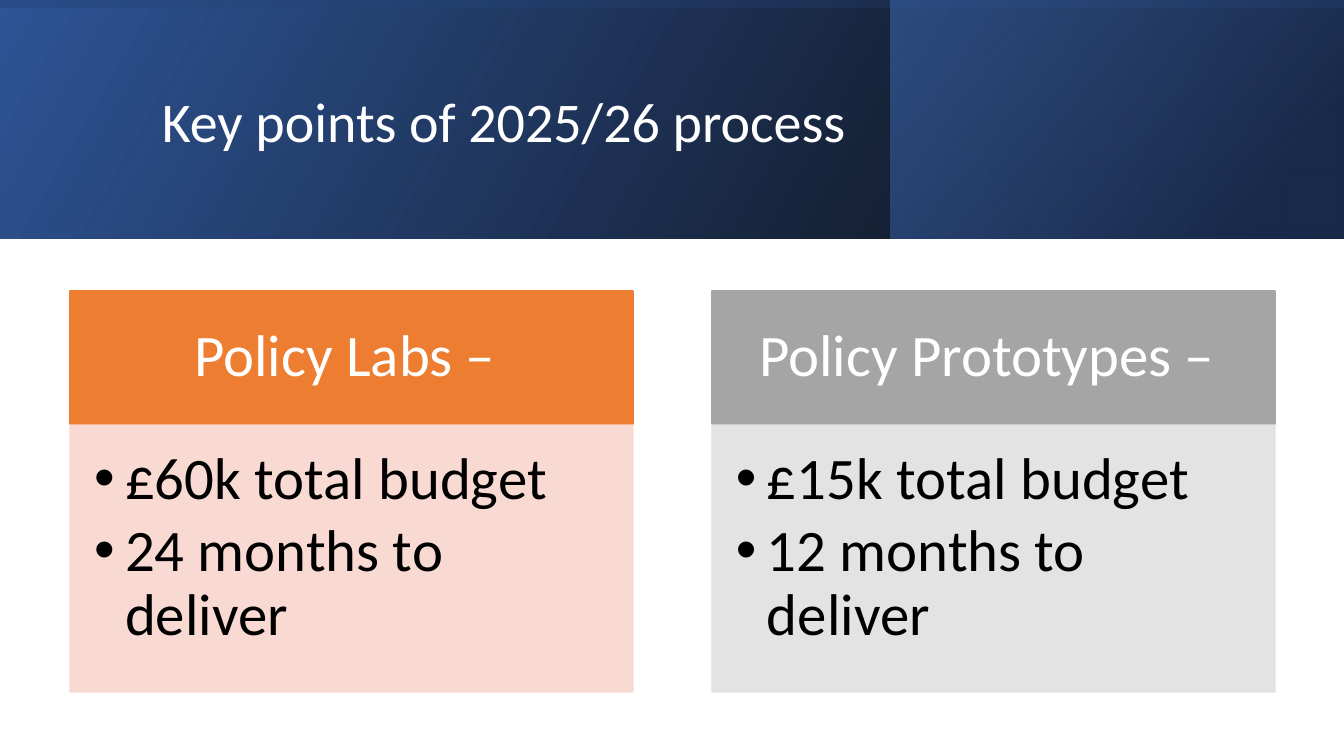
from dataclasses import dataclass

from lxml import etree
from pptx import Presentation
from pptx.dml.color import RGBColor
from pptx.enum.shapes import MSO_SHAPE
from pptx.enum.text import MSO_ANCHOR, MSO_AUTO_SIZE, PP_ALIGN
from pptx.oxml.ns import qn
from pptx.util import Emu, Pt

RECTANGLE = MSO_SHAPE.RECTANGLE
TOP, MIDDLE = MSO_ANCHOR.TOP, MSO_ANCHOR.MIDDLE
LEFT, CENTER = PP_ALIGN.LEFT, PP_ALIGN.CENTER
NO_AUTOFIT = MSO_AUTO_SIZE.NONE
COMPARISON_LAYOUT = 4
EMU_PER_PX = 914400 / 100.8


@dataclass(frozen=True)
class Theme:
    font: str = "Calibri"
    title_size: int = 40
    card_size: int = 42
    light: str = "FFFFFF"
    dark: str = "000000"
    blue: str = "2F5597"
    navy: str = "203864"
    accent: str = "4472C4"
    orange: str = "ED7D31"
    peach: str = "F8D7CE"
    gray: str = "A5A5A5"
    pale_gray: str = "E1E1E1"


THEME = Theme()

BANNER = [
    ((0, 0, 1344, 239), 0, 330, [(0, THEME.dark, 96), (100, THEME.blue, 100)]),
    ((891, 0, 452, 239), 0, 320, [(19, THEME.navy, 68), (100, THEME.accent, 48)]),
    ((552, -552, 239, 1344), 270, 350, [(23, THEME.blue, 16), (99, THEME.dark, 45)]),
]

CARDS = [
    ("Policy Labs – ", ["£60k total budget", "24 months to deliver"],
     THEME.orange, THEME.peach),
    ("Policy Prototypes – ", ["£15k total budget", "12 months to deliver"],
     THEME.gray, THEME.pale_gray),
]
CARD_LEFT, CARD_STEP, CARD_WIDTH = 70, 642, 563
HEADING_TOP, HEADING_HEIGHT = 291, 133
POINTS_TOP, POINTS_HEIGHT = 425, 267
BULLET_INDENT = 31


def px(length):
    return Emu(round(length * EMU_PER_PX))


def place(shape, box):
    shape.left, shape.top, shape.width, shape.height = map(px, box)


def add_color(parent, color, opacity):
    rgb = etree.SubElement(parent, qn("a:srgbClr"), val=color)
    etree.SubElement(rgb, qn("a:alpha"), val=str(opacity * 1000))


def add_banner_layer(slide, box, rotation, angle, stops):
    layer = slide.shapes.add_shape(RECTANGLE, *map(px, box))
    layer.shadow.inherit = False
    layer.line.fill.background()
    layer.rotation = rotation
    properties = layer._element.spPr
    properties.find(qn("a:xfrm")).set("flipH", "1")
    gradient = etree.Element(qn("a:gradFill"), rotWithShape="1")
    stop_list = etree.SubElement(gradient, qn("a:gsLst"))
    for position, color, opacity in stops:
        stop = etree.SubElement(stop_list, qn("a:gs"), pos=str(position * 1000))
        add_color(stop, color, opacity)
    etree.SubElement(gradient, qn("a:lin"), ang=str(angle * 60000), scaled="0")
    properties.find(qn("a:prstGeom")).addnext(gradient)


def paint(shape, color, opacity=100):
    shape.line.width = Pt(1)
    for fill in (shape.fill, shape.line.fill):
        fill.solid()
        fill.fore_color.rgb = RGBColor.from_string(color)
    for rgb in shape._element.spPr.iter(qn("a:srgbClr")):
        etree.SubElement(rgb, qn("a:alpha"), val=str(opacity * 1000))


def write(shape, lines, size, color, align, anchor, insets, space_after=0):
    frame = shape.text_frame
    frame.text = "\n".join(lines)
    frame.word_wrap = True
    frame.auto_size = NO_AUTOFIT
    frame.vertical_anchor = anchor
    (frame.margin_left, frame.margin_top,
     frame.margin_right, frame.margin_bottom) = map(px, insets)
    for paragraph in frame.paragraphs:
        paragraph.alignment = align
        paragraph.line_spacing = 0.9
        paragraph.space_before = Pt(0)
        paragraph.space_after = Pt(space_after)
        for run in paragraph.runs:
            run.font.name = THEME.font
            run.font.size = Pt(size)
            run.font.bold = False
            run.font.color.rgb = RGBColor.from_string(color)


def add_title(slide, wording):
    title = slide.shapes.title
    place(title, (152, 38, 1072, 173))
    write(title, [wording], THEME.title_size, THEME.light, LEFT, MIDDLE,
          (10, 5, 10, 5))
    slide.shapes._spTree.append(title._element)


def fill_card(heading, points, left, card):
    name, items, heading_color, points_color = card
    place(heading, (left, HEADING_TOP, CARD_WIDTH, HEADING_HEIGHT))
    paint(heading, heading_color)
    write(heading, [name], THEME.card_size, THEME.light, CENTER, MIDDLE,
          (33, 19, 33, 19))
    place(points, (left, POINTS_TOP, CARD_WIDTH, POINTS_HEIGHT))
    paint(points, points_color, 90)
    write(points, items, THEME.card_size, THEME.dark, LEFT, TOP,
          (24, 24, 33, 37), space_after=6)
    for paragraph in points.text_frame.paragraphs:
        properties = paragraph._p.get_or_add_pPr()
        properties.set("marL", str(px(BULLET_INDENT)))
        properties.set("indent", str(px(-BULLET_INDENT)))


def main():
    deck = Presentation()
    deck.slide_width, deck.slide_height = px(1344), px(756)
    slide = deck.slides.add_slide(deck.slide_layouts[COMPARISON_LAYOUT])
    for layer in BANNER:
        add_banner_layer(slide, *layer)
    add_title(slide, "Key points of 2025/26 process")
    slots = {slot.placeholder_format.idx: slot for slot in slide.placeholders}
    for column, card in enumerate(CARDS):
        heading, points = slots[2 * column + 1], slots[2 * column + 2]
        fill_card(heading, points, CARD_LEFT + column * CARD_STEP, card)
    deck.save("out.pptx")


if __name__ == "__main__":
    main()
